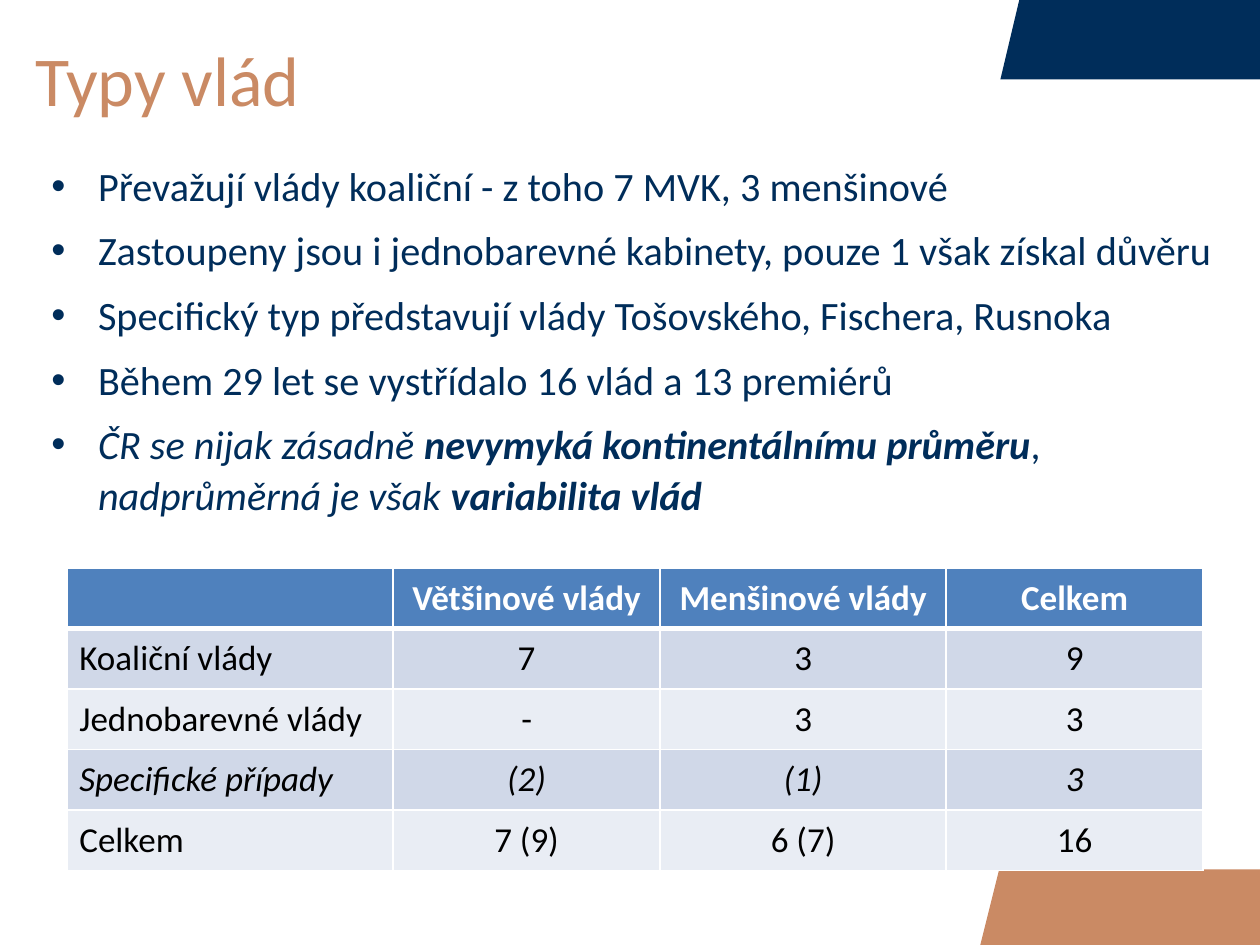
from dataclasses import dataclass

from lxml import etree
from pptx import Presentation
from pptx import util as u
from pptx.dml.color import RGBColor
from pptx.enum import text
from pptx.oxml import ns

FONT = "Calibri"
NAVY, COPPER, WHITE, BLACK = "002D5A", "CA8A64", "FFFFFF", "000000"
HEADER_FILL, BAND_FILLS = "4F81BD", ("D0D8E8", "E9EDF4")


@dataclass
class CornerBand:
    """A slanted bar that reaches the right edge of the slide."""
    left: float
    top: float
    height: float
    color: str


@dataclass
class Span:
    words: str
    bold: bool = False


@dataclass
class Bullet:
    spans: list[Span]
    italic: bool = False


@dataclass
class Row:
    cells: list[str]
    italic: bool = False


BANDS = [CornerBand(7.94, 0, 0.63, NAVY), CornerBand(7.78, 6.9, 0.6, COPPER)]

BULLETS = [
    Bullet([Span("Převažují vlády koaliční - z toho 7 MVK, 3 menšinové")]),
    Bullet([Span("Zastoupeny jsou i jednobarevné kabinety, pouze 1 však získal důvěru")]),
    Bullet([Span("Specifický typ představují vlády Tošovského, Fischera, Rusnoka")]),
    Bullet([Span("Během 29 let se vystřídalo 16 vlád a 13 premiérů")]),
    Bullet([Span("ČR se nijak zásadně "),
            Span("nevymyká kontinentálnímu průměru", bold=True),
            Span(", nadprůměrná je však "),
            Span("variabilita vlád", bold=True)], italic=True),
]

COLUMN_WIDTHS = [2.59, 2.12, 2.27, 2.04]
ROW_HEIGHT = 0.48
ROWS = [
    Row(["", "Většinové vlády", "Menšinové vlády", "Celkem"]),
    Row(["Koaliční vlády", "7", "3", "9"]),
    Row(["Jednobarevné vlády", "-", "3", "3"]),
    Row(["Specifické případy", "(2)", "(1)", "3"], italic=True),
    Row(["Celkem", "7 (9)", "6 (7)", "16"]),
]


def rgb(color: str) -> RGBColor:
    return RGBColor.from_string(color)


def set_font(font, size: float, color: str) -> None:
    font.name, font.size = FONT, u.Pt(size)
    font.color.rgb = rgb(color)


def draw_band(page, band: CornerBand) -> None:
    slant, right = 0.15, 10
    bottom = band.top + band.height
    outline = page.shapes.build_freeform(
        u.Inches(band.left), u.Inches(bottom), scale=1.0)
    corners = [(band.left + slant, band.top), (right, band.top), (right, bottom)]
    outline.add_line_segments(
        [(u.Inches(x), u.Inches(y)) for x, y in corners], close=True)
    shape = outline.convert_to_shape()
    shape.shadow.inherit = False
    shape.fill.solid()
    shape.fill.fore_color.rgb = rgb(band.color)
    shape.line.fill.background()


def draw_title(page, words: str) -> None:
    title = page.shapes.title
    title.left, title.top = u.Inches(0), u.Inches(0.12)
    title.width, title.height = u.Inches(10), u.Inches(1.01)
    frame = title.text_frame
    frame.margin_left = frame.margin_right = u.Inches(0.28)
    frame.vertical_anchor = text.MSO_ANCHOR.MIDDLE
    frame.text = words
    para = frame.paragraphs[0]
    para.alignment = text.PP_ALIGN.LEFT
    set_font(para.font, 40, COPPER)


def add_bullet_mark(para) -> None:
    indent = u.Inches(0.37)
    props = para._p.get_or_add_pPr()
    props.set("marL", str(indent))
    props.set("indent", str(-indent))
    etree.SubElement(props, ns.qn("a:buFont")).set("typeface", "Arial")
    etree.SubElement(props, ns.qn("a:buChar")).set("char", "•")


def draw_bullets(page, bullets: list[Bullet]) -> None:
    box = page.shapes.add_textbox(
        u.Inches(0.31), u.Inches(1.21), u.Inches(9.44), u.Inches(3.32))
    frame = box.text_frame
    frame.word_wrap = True
    for index, bullet in enumerate(bullets):
        para = frame.paragraphs[0] if index == 0 else frame.add_paragraph()
        add_bullet_mark(para)
        para.line_spacing = 1.05
        if index:
            para.space_before = u.Pt(8)
        set_font(para.font, 23, NAVY)
        para.font.italic = bullet.italic
        for span in bullet.spans:
            run = para.add_run()
            run.text = span.words
            run.font.bold = span.bold


def set_borders(cell, bottom_width: float) -> None:
    props = cell._tc.get_or_add_tcPr()
    widths = {"lnL": 1, "lnR": 1, "lnT": 1, "lnB": bottom_width}
    for position, (side, width) in enumerate(widths.items()):
        line = etree.Element(ns.qn(f"a:{side}"), w=str(u.Pt(width)))
        fill = etree.SubElement(line, ns.qn("a:solidFill"))
        etree.SubElement(fill, ns.qn("a:srgbClr")).set("val", WHITE)
        props.insert(position, line)


def draw_table(page, rows: list[Row]) -> None:
    table = page.shapes.add_table(
        len(rows), len(COLUMN_WIDTHS), u.Inches(0.53), u.Inches(4.51),
        u.Inches(sum(COLUMN_WIDTHS)), u.Inches(ROW_HEIGHT * len(rows))).table
    for column, width in zip(table.columns, COLUMN_WIDTHS):
        column.width = u.Inches(width)
    for r, row in enumerate(rows):
        header = r == 0
        for c, words in enumerate(row.cells):
            cell = table.cell(r, c)
            cell.text = words
            cell.vertical_anchor = text.MSO_ANCHOR.MIDDLE
            cell.fill.solid()
            cell.fill.fore_color.rgb = rgb(
                HEADER_FILL if header else BAND_FILLS[(r - 1) % 2])
            # The top edge of the first body row is the header's thick rule
            set_borders(cell, 3 if header else 1)
            para = cell.text_frame.paragraphs[0]
            para.alignment = text.PP_ALIGN.CENTER if c else text.PP_ALIGN.LEFT
            set_font(para.font, 20, WHITE if header else BLACK)
            para.font.bold = header
            para.font.italic = row.italic


def main() -> None:
    deck = Presentation()
    deck.slide_width, deck.slide_height = u.Inches(10), u.Inches(7.5)
    page = deck.slides.add_slide(deck.slide_layouts.get_by_name("Title Only"))
    # Corner decoration
    for band in BANDS:
        draw_band(page, band)
    # Content
    draw_title(page, "Typy vlád")
    draw_bullets(page, BULLETS)
    draw_table(page, ROWS)
    deck.save("out.pptx")


if __name__ == "__main__":
    main()
